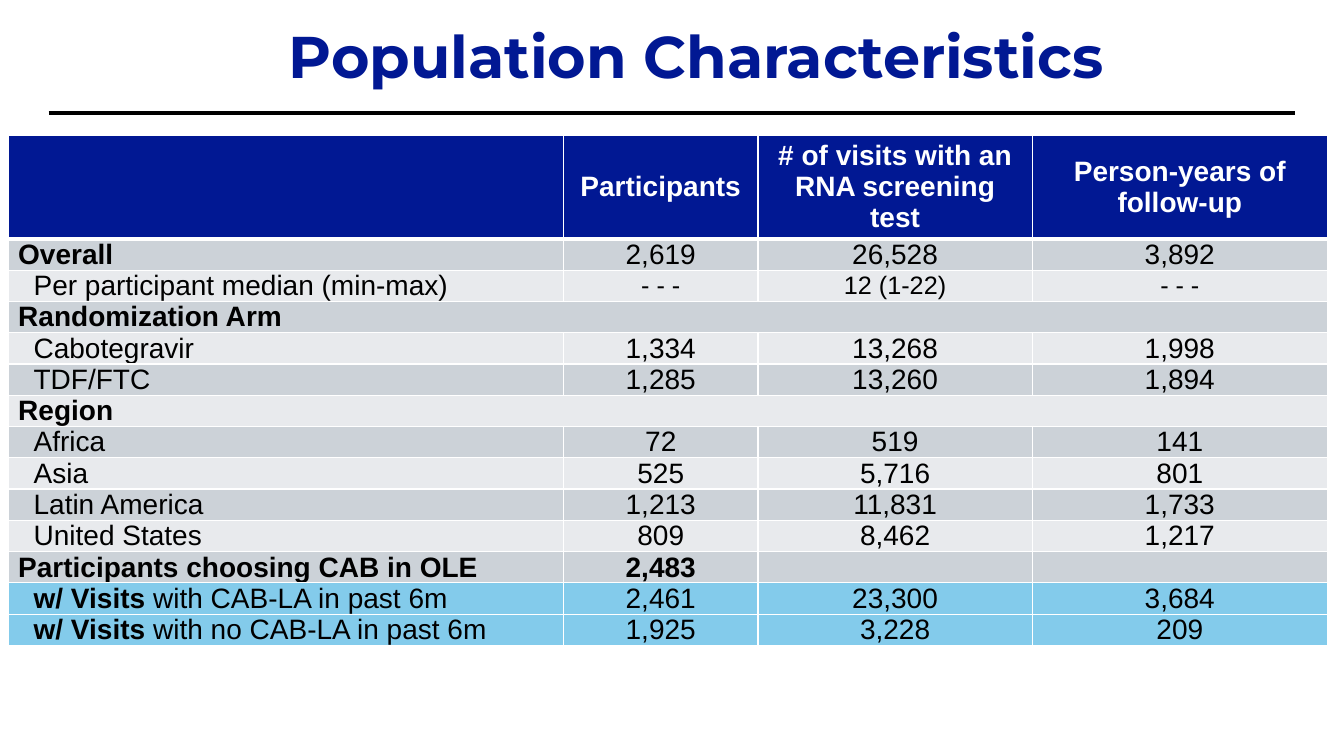
from pptx import Presentation
from pptx.dml.color import RGBColor
from pptx.enum.shapes import MSO_CONNECTOR as Link
from pptx.enum.text import MSO_ANCHOR as Anchor, MSO_AUTO_SIZE as Fit, PP_ALIGN as Align
from pptx.oxml.ns import qn
from pptx.util import Pt
from lxml.etree import SubElement as Sub

# Content
TITLE = "Population Characteristics"
HEADS = ["", "Participants", "# of visits with an RNA screening test",
         "Person-years of follow-up"]
# Bold part of the label, plain part, values
ROWS = [
    ("Overall", "", ["2,619", "26,528", "3,892"]),
    ("", "Per participant median (min-max)", ["- - -", "12 (1-22)", "- - -"]),
    ("Randomization Arm", "", []),
    ("", "Cabotegravir", ["1,334", "13,268", "1,998"]),
    ("", "TDF/FTC", ["1,285", "13,260", "1,894"]),
    ("Region", "", []),
    ("", "Africa", ["72", "519", "141"]),
    ("", "Asia", ["525", "5,716", "801"]),
    ("", "Latin America", ["1,213", "11,831", "1,733"]),
    ("", "United States", ["809", "8,462", "1,217"]),
    ("Participants choosing CAB in OLE", "", ["2,483", "", ""]),
    ("w/ Visits", " with CAB-LA in past 6m", ["2,461", "23,300", "3,684"]),
    ("w/ Visits", " with no CAB-LA in past 6m", ["1,925", "3,228", "209"]),
]
SMALL, TOTAL, RECENT = 2, 11, 12  # rows: 18 pt values, bold value, first blue

# Colours
NAVY = RGBColor(0x01, 0x18, 0x93)
WHITE = RGBColor(0xFF, 0xFF, 0xFF)
BLACK = RGBColor(0, 0, 0)
DARK = RGBColor(0xCC, 0xD2, 0xD8)
LIGHT = RGBColor(0xE8, 0xEA, 0xED)
BLUE = RGBColor(0x83, 0xCB, 0xEB)

# Measures in points
WIDTHS = [396.7, 139, 195.8, 211]
HEAD_H, ROW_H = 74, 22.3
PAD, INDENT = 7.2, 11


def style(font, size, color, bold, name="Arial"):
    font.color.rgb = color
    for key, value in dict(name=name, size=Pt(size), bold=bold).items():
        setattr(font, key, value)


def edge(cell, top, bottom):
    props = cell._tc.get_or_add_tcPr()
    for side, width in dict(lnL=1, lnR=1, lnT=top, lnB=bottom).items():
        line = Sub(props, qn("a:" + side), w=str(Pt(width)))
        Sub(Sub(line, qn("a:solidFill")), qn("a:srgbClr"), val=str(WHITE))


def write(cell, parts, size, color, align):
    para = cell.text_frame.paragraphs[0]
    para.alignment = align
    for text, bold in parts:
        if text:
            run = para.add_run()
            run.text = text
            style(run.font, size, color, bold)


deck = Presentation()
deck.slide_width, deck.slide_height = Pt(960), Pt(540)
slide = deck.slides.add_slide(deck.slide_layouts[5])

# Title
title = slide.shapes.title
box = dict(left=Pt(43.2), top=Pt(0), width=Pt(882), height=Pt(96.5))
for key, value in box.items():
    setattr(title, key, value)
frame = title.text_frame
frame.text = TITLE
look = dict(margin_left=Pt(26), margin_top=Pt(20), margin_right=0, margin_bottom=0,
            vertical_anchor=Anchor.TOP, auto_size=Fit.NONE, word_wrap=True)
for key, value in look.items():
    setattr(frame, key, value)
para = frame.paragraphs[0]
para.alignment, para.line_spacing = Align.CENTER, 0.9
style(para.runs[0].font, 42, NAVY, True, "Montserrat")

# Rule under the title
rule = slide.shapes.add_connector(Link.STRAIGHT, Pt(34.8), Pt(80.8), Pt(925), Pt(80.8))
rule.line.color.rgb, rule.line.width = BLACK, Pt(3)
Sub(rule._element.spPr, qn("a:effectLst"))

# Table grid
count = len(ROWS) + 1
table = slide.shapes.add_table(count, len(HEADS), Pt(5.8), Pt(96.5), Pt(sum(WIDTHS)),
                               Pt(HEAD_H + ROW_H * len(ROWS))).table
for col, width in zip(table.columns, WIDTHS):
    col.width = Pt(width)
for r, row in enumerate(table.rows):
    row.height = Pt(ROW_H if r else HEAD_H)
    fill = NAVY if r == 0 else BLUE if r >= RECENT else DARK if r % 2 else LIGHT
    for cell in row.cells:
        edge(cell, 3 if r == 1 else 1, 1 if r else 3)
        cell.fill.solid()
        cell.fill.fore_color.rgb = fill
        cell.vertical_anchor = Anchor.MIDDLE
        cell.margin_left = cell.margin_right = Pt(PAD)
        if r:
            cell.margin_top = cell.margin_bottom = 0

# Header row
for c, head in enumerate(HEADS):
    write(table.cell(0, c), [(head, True)], 20, WHITE, Align.CENTER)

# Body rows
for r, (strong, plain, values) in enumerate(ROWS, 1):
    label = table.cell(r, 0)
    write(label, [(strong, True), (plain, False)], 20, BLACK, Align.LEFT)
    if plain:
        label.margin_left = Pt(PAD + INDENT)
    if not values:
        label.merge(table.cell(r, len(HEADS) - 1))
    for c, value in enumerate(values, 1):
        write(table.cell(r, c), [(value, r == TOTAL)], 18 if r == SMALL else 20,
              BLACK, Align.CENTER)

deck.save("out.pptx")
